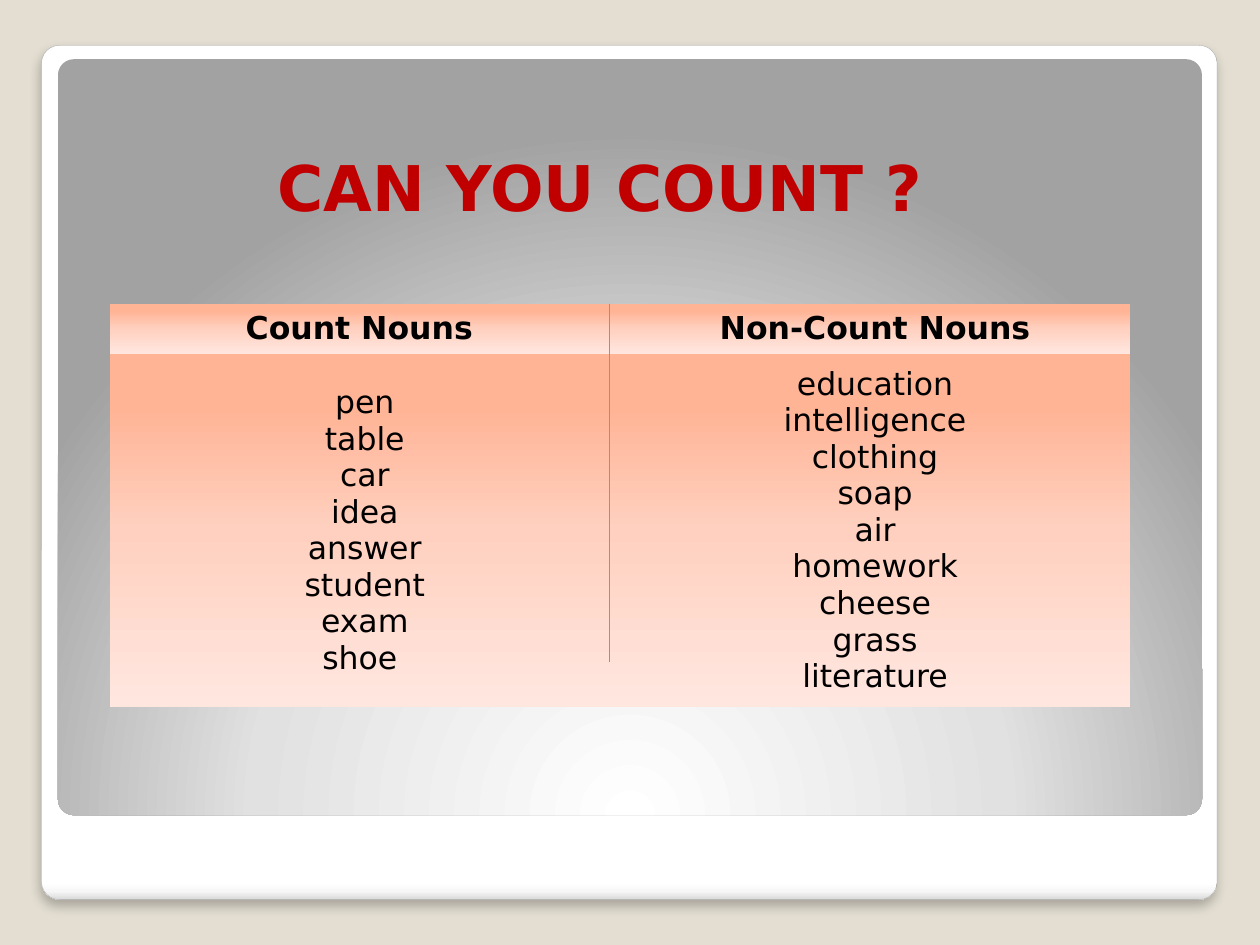
import pptx
import pptx.dml.color
import pptx.enum.shapes
import pptx.enum.text
import pptx.oxml
import pptx.oxml.ns
import pptx.util
from pptx.dml.color import RGBColor
from pptx.util import Inches

FONT = "DejaVu Sans"
BACKGROUND = RGBColor(0xE3, 0xDE, 0xD1)
FRAME_LINE = RGBColor(0xA4, 0xA4, 0xA4)
TITLE_RED = RGBColor(0xC0, 0x00, 0x00)
DIVIDER_ORANGE = RGBColor(0xF9, 0x7F, 0x00)
BLACK = RGBColor(0x00, 0x00, 0x00)
WHITE = RGBColor(0xFF, 0xFF, 0xFF)

FRAME_STOPS = [(0, WHITE), (98, WHITE), (99, RGBColor(0xF7, 0xF7, 0xF7)),
               (100, RGBColor(0xDA, 0xDA, 0xDA))]
PANEL_STOPS = [(0, WHITE), (55, RGBColor(0xE1, 0xE1, 0xE1)),
               (100, RGBColor(0xA2, 0xA2, 0xA2))]
CELL_STOPS = [(15, RGBColor(0xFF, 0xB4, 0x96)), (50, RGBColor(0xFF, 0xD0, 0xBF)),
              (100, RGBColor(0xFF, 0xE7, 0xE0))]

DOWNWARD = '<a:lin ang="5400000" scaled="0"/>'
FROM_BELOW = ('<a:path path="circle">'
              '<a:fillToRect l="50000" t="175000" r="50000" b="-75000"/></a:path>')
NAMESPACE = pptx.oxml.ns.nsdecls("a")
PLAIN_TABLE_STYLE = "{2D5ABB26-0587-4C30-8999-92F81FD0307C}"

COUNT_NOUNS = ["pen", "table", "car", "idea", "answer", "student", "exam", "shoe "]
NON_COUNT_NOUNS = ["education", "intelligence", "clothing", "soap", "air",
                   "homework", "cheese", "grass", "literature"]


def set_gradient(fill, properties, stops, direction):
    """Fill the owner of the properties element with any number of stops."""
    fill.gradient()
    stop_xml = "".join(
        f'<a:gs pos="{position * 1000}"><a:srgbClr val="{color}"/></a:gs>'
        for position, color in stops)
    gradient = pptx.oxml.parse_xml(
        f'<a:gradFill {NAMESPACE} rotWithShape="1">'
        f'<a:gsLst>{stop_xml}</a:gsLst>{direction}</a:gradFill>')
    properties.replace(properties.find(pptx.oxml.ns.qn("a:gradFill")), gradient)


def add_lines(para, lines, size, color, bold):
    para.alignment = pptx.enum.text.PP_ALIGN.CENTER
    for index, line in enumerate(lines):
        if index:
            para.add_line_break()
        span = para.add_run()
        span.text = line
        span.font.name = FONT
        span.font.size = pptx.util.Pt(size)
        span.font.bold = bold
        span.font.color.rgb = color


def add_rounded_box(page, box, stops, direction):
    shape = page.shapes.add_shape(
        pptx.enum.shapes.MSO_SHAPE.ROUNDED_RECTANGLE, *map(Inches, box))
    shape.adjustments[0] = 0.021
    set_gradient(shape.fill, shape._element.spPr, stops, direction)
    shape.line.fill.background()
    shape.shadow.inherit = False
    return shape


def add_backdrop(page, box):
    """Place the white frame with its soft shadow and the grey panel inside it."""
    left, top, width, height = box
    frame = add_rounded_box(page, box, FRAME_STOPS, DOWNWARD)
    frame.line.color.rgb = FRAME_LINE
    frame.line.width = pptx.util.Pt(0.16)
    effects = frame._element.spPr.find(pptx.oxml.ns.qn("a:effectLst"))
    effects.append(pptx.oxml.parse_xml(
        f'<a:outerShdw {NAMESPACE} blurRad="{pptx.util.Pt(6)}" '
        f'dist="{pptx.util.Pt(4)}" dir="5400000" algn="t" rotWithShape="0">'
        '<a:srgbClr val="000000"><a:alpha val="25000"/></a:srgbClr></a:outerShdw>'))
    panel = (left + 0.13, top + 0.11, width - 0.25, height - 0.78)
    add_rounded_box(page, panel, PANEL_STOPS, FROM_BELOW)


def add_title(page, box):
    frame = page.shapes.add_textbox(*map(Inches, box)).text_frame
    frame.word_wrap = True
    frame.vertical_anchor = pptx.enum.text.MSO_ANCHOR.BOTTOM
    add_lines(frame.paragraphs[0], ["CAN YOU COUNT ?"], 36, TITLE_RED, True)


def add_noun_table(page, box):
    left, top, width, height = box
    header_height = 0.39
    rows = [(["Count Nouns "], ["Non-Count Nouns"]), (COUNT_NOUNS, NON_COUNT_NOUNS)]
    graphic = page.shapes.add_table(2, 2, *map(Inches, box))
    table = graphic.table
    table.horz_banding = False
    style = table._tbl.tblPr.find(pptx.oxml.ns.qn("a:tableStyleId"))
    style.text = PLAIN_TABLE_STYLE
    for column in table.columns:
        column.width = Inches(width / 2)
    table.rows[0].height = Inches(header_height)
    table.rows[1].height = Inches(height - header_height)
    for row_index, row in enumerate(rows):
        for column_index, lines in enumerate(row):
            cell = table.cell(row_index, column_index)
            cell.vertical_anchor = pptx.enum.text.MSO_ANCHOR.MIDDLE
            set_gradient(cell.fill, cell._tc.tcPr, CELL_STOPS, DOWNWARD)
            add_lines(cell.text_frame.paragraphs[0], lines, 18, BLACK, row_index == 0)


def add_divider(page, x, top, bottom):
    divider = page.shapes.add_connector(
        pptx.enum.shapes.MSO_CONNECTOR.STRAIGHT,
        Inches(x), Inches(top), Inches(x), Inches(bottom))
    divider.line.color.rgb = DIVIDER_ORANGE
    divider.line.width = pptx.util.Pt(0.75)
    divider._element.spPr.append(pptx.oxml.parse_xml(f"<a:effectLst {NAMESPACE}/>"))


def main():
    deck = pptx.Presentation()
    deck.slide_width, deck.slide_height = Inches(10), Inches(7.5)
    page = deck.slides.add_slide(deck.slide_layouts[6])
    page.background.fill.solid()
    page.background.fill.fore_color.rgb = BACKGROUND
    add_backdrop(page, (0.33, 0.36, 9.33, 6.78))
    add_title(page, (1.61, 0.68, 6.3, 1.15))
    add_noun_table(page, (0.87, 2.41, 8.1, 3.1))
    add_divider(page, 4.84, 2.41, 5.25)
    deck.save("out.pptx")


if __name__ == "__main__":
    main()
